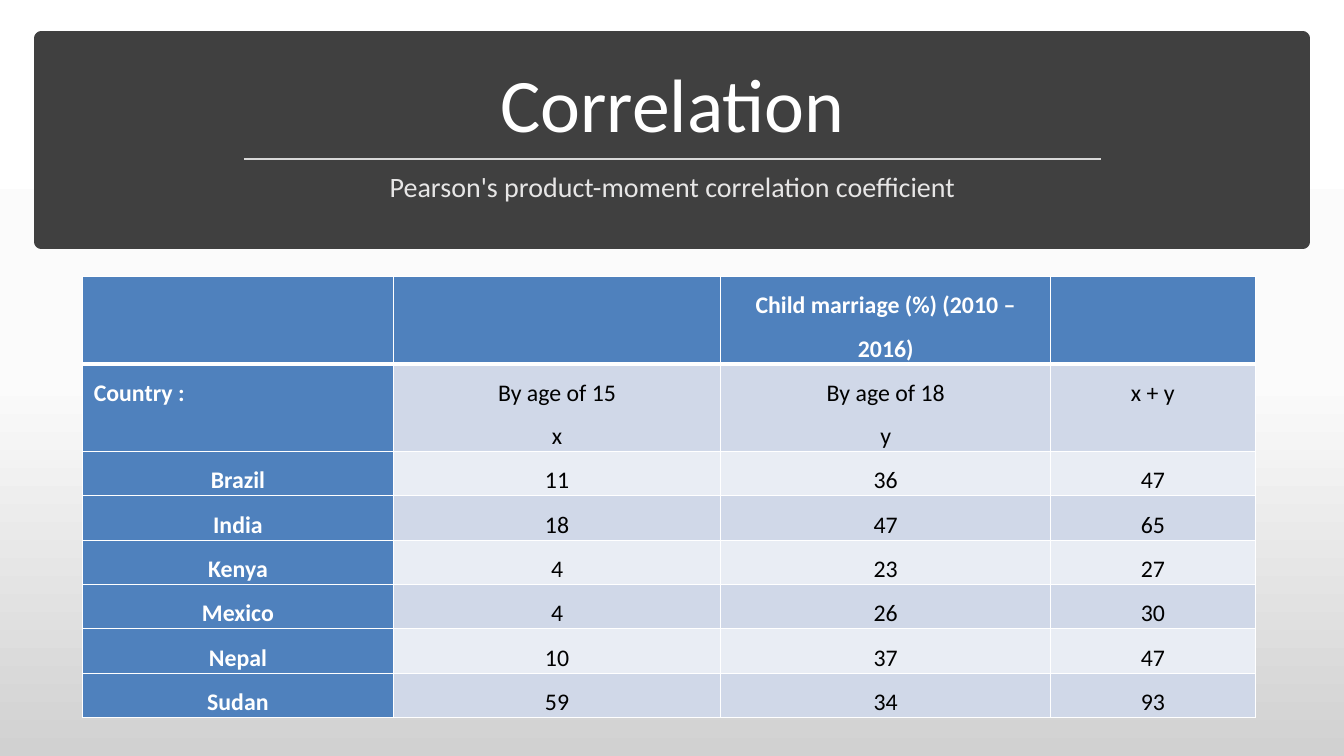
from lxml import etree
from pptx import Presentation
from pptx.dml.color import RGBColor
from pptx.enum.shapes import MSO_CONNECTOR, MSO_SHAPE
from pptx.enum.text import MSO_ANCHOR, PP_ALIGN
from pptx.oxml.ns import qn
from pptx.util import Inches, Pt

CENTER, JUSTIFY = PP_ALIGN.CENTER, PP_ALIGN.JUSTIFY
TOP, BOTTOM = MSO_ANCHOR.TOP, MSO_ANCHOR.BOTTOM
RECTANGLE, STRAIGHT = MSO_SHAPE.RECTANGLE, MSO_CONNECTOR.STRAIGHT

FONT = "Calibri"
WHITE, BLACK, BANNER = "FFFFFF", "000000", "404040"
HEADER_BLUE = "4F81BD"
BANDS = ("D0D8E8", "E9EDF4")
BACKDROP = ((0, "FFFFFF"), (50, "FBFBFB"), (100, "D1D1D1"))

COLUMN_WIDTHS = (3.08, 3.25, 3.27, 2.03)
HEADING_HEIGHT, COUNTRY_HEIGHT = 0.87, 0.44
HEADINGS = [
    ("", "", "Child marriage (%) (2010 – 2016)", ""),
    ("Country :", "By age of 15\nx", "By age of 18\ny", "x + y"),
]
MARRIAGE_RATES = [
    ("Brazil", 11, 36),
    ("India", 18, 47),
    ("Kenya", 4, 23),
    ("Mexico", 4, 26),
    ("Nepal", 10, 37),
    ("Sudan", 59, 34),
]


def color(hex_code):
    return RGBColor.from_string(hex_code)


def format_text(frame, size, hex_code, spacing, bold=False, align=CENTER, before=0):
    for paragraph in frame.paragraphs:
        paragraph.alignment = align
        paragraph.line_spacing = spacing
        paragraph.space_before = Pt(before)
        for run in paragraph.runs:
            run.font.name = FONT
            run.font.size = Pt(size)
            run.font.bold = bold
            run.font.color.rgb = color(hex_code)


def add_backdrop(slide):
    fill = slide.background.fill
    fill.gradient()
    fill.gradient_angle = 270
    stops = slide.element.find(".//" + qn("a:gsLst"))
    for stop in list(stops):
        stops.remove(stop)
    for percent, hex_code in BACKDROP:
        stop = etree.SubElement(stops, qn("a:gs"), pos=str(percent * 1000))
        etree.SubElement(stop, qn("a:srgbClr"), val=hex_code)


def add_banner(slide, left, top, width, height):
    banner = slide.shapes.add_shape(
        RECTANGLE, Inches(left), Inches(top), Inches(width), Inches(height))
    banner.shadow.inherit = False
    banner.fill.solid()
    banner.fill.fore_color.rgb = color(BANNER)
    banner.line.color.rgb = color(BANNER)
    banner.line.width = Pt(10)


def add_heading(slide, text, left, top, width, height, size, hex_code, anchor, before=0):
    heading = slide.shapes.add_textbox(
        Inches(left), Inches(top), Inches(width), Inches(height))
    frame = heading.text_frame
    frame.word_wrap = True
    frame.vertical_anchor = anchor
    frame.text = text
    format_text(frame, size, hex_code, 0.9, before=before)


def add_divider(slide, left, right, y):
    divider = slide.shapes.add_connector(
        STRAIGHT, Inches(left), Inches(y), Inches(right), Inches(y))
    divider.line.color.rgb = color("D9D9D9")
    divider.line.width = Pt(1.75)
    etree.SubElement(divider.element.spPr, qn("a:effectLst"))


def set_borders(cell, top, bottom):
    properties = cell._tc.get_or_add_tcPr()
    for side, width in (("L", 1), ("R", 1), ("T", top), ("B", bottom)):
        border = etree.SubElement(properties, qn("a:ln" + side), w=str(Pt(width)))
        fill = etree.SubElement(border, qn("a:solidFill"))
        etree.SubElement(fill, qn("a:srgbClr"), val=WHITE)


def fill_cell(cell, text, row, column):
    is_header = row == 0 or column == 0
    set_borders(cell, top=3 if row == 1 else 1, bottom=3 if row == 0 else 1)
    cell.fill.solid()
    cell.fill.fore_color.rgb = color(HEADER_BLUE if is_header else BANDS[(row - 1) % 2])
    cell.margin_left = cell.margin_right = Inches(0.11)
    cell.margin_top = cell.margin_bottom = 0
    cell.text_frame.text = text
    format_text(cell.text_frame, 17, WHITE if is_header else BLACK, 1.5, bold=is_header,
                align=JUSTIFY if (row, column) == (1, 0) else CENTER)


def add_rates_table(slide, left, top):
    rows = HEADINGS + [(country, str(x), str(y), str(x + y))
                       for country, x, y in MARRIAGE_RATES]
    heights = [HEADING_HEIGHT] * len(HEADINGS) + [COUNTRY_HEIGHT] * len(MARRIAGE_RATES)
    table = slide.shapes.add_table(
        len(rows), len(COLUMN_WIDTHS), Inches(left), Inches(top),
        Inches(sum(COLUMN_WIDTHS)), Inches(sum(heights))).table
    for column, width in zip(table.columns, COLUMN_WIDTHS):
        column.width = Inches(width)
    for row, (texts, height) in enumerate(zip(rows, heights)):
        table.rows[row].height = Inches(height)
        for column, text in enumerate(texts):
            fill_cell(table.cell(row, column), text, row, column)


def main():
    presentation = Presentation()
    presentation.slide_width = Inches(13.33)
    presentation.slide_height = Inches(7.5)
    slide = presentation.slides.add_slide(presentation.slide_layouts[6])

    # Background and title banner
    add_backdrop(slide)
    add_banner(slide, 0.41, 0.38, 12.51, 2.02)
    add_heading(slide, "Correlation", 0.58, 0.51, 12.18, 1.02, 54, WHITE, BOTTOM)
    add_heading(slide, "Pearson's product-moment correlation coefficient",
                1.67, 1.67, 10, 0.46, 20, "E7E6E6", TOP, before=10)
    add_divider(slide, 2.42, 10.92, 1.58)

    # Child marriage rates by country
    add_rates_table(slide, 0.82, 2.74)

    presentation.save("out.pptx")


if __name__ == "__main__":
    main()
